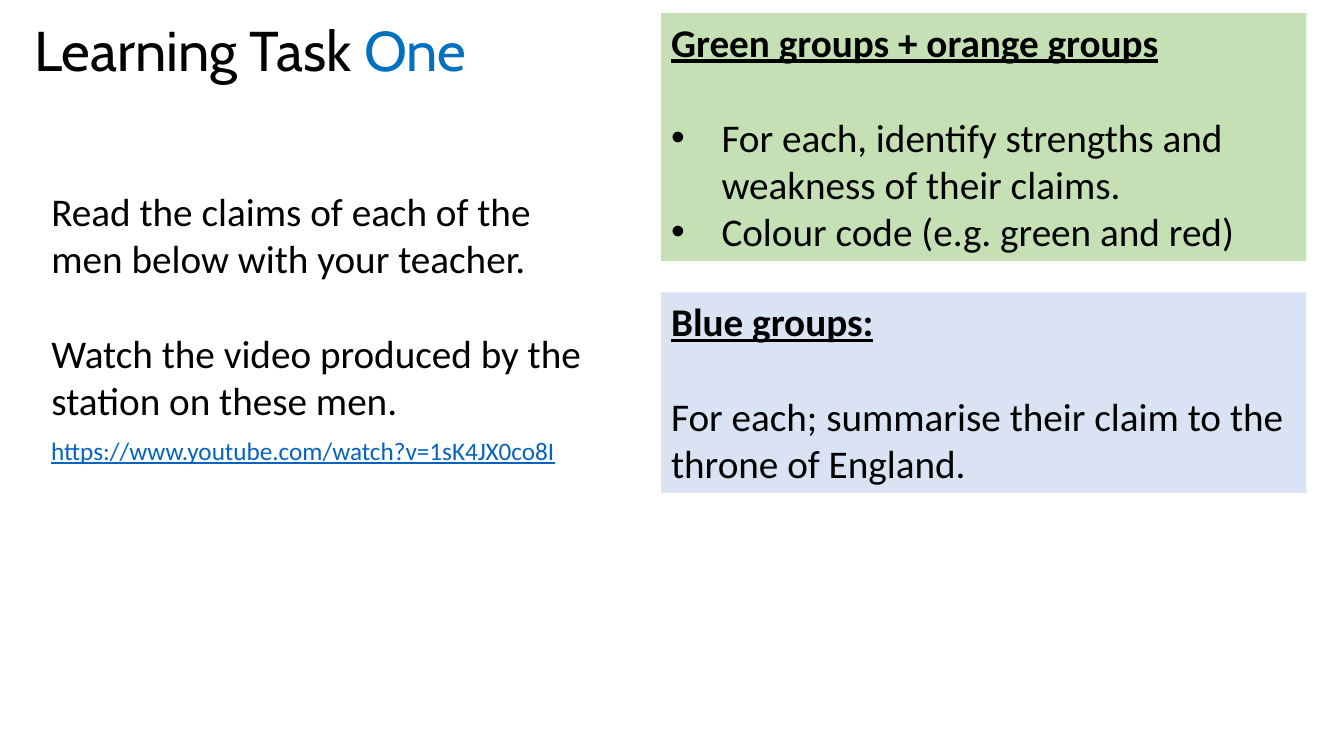
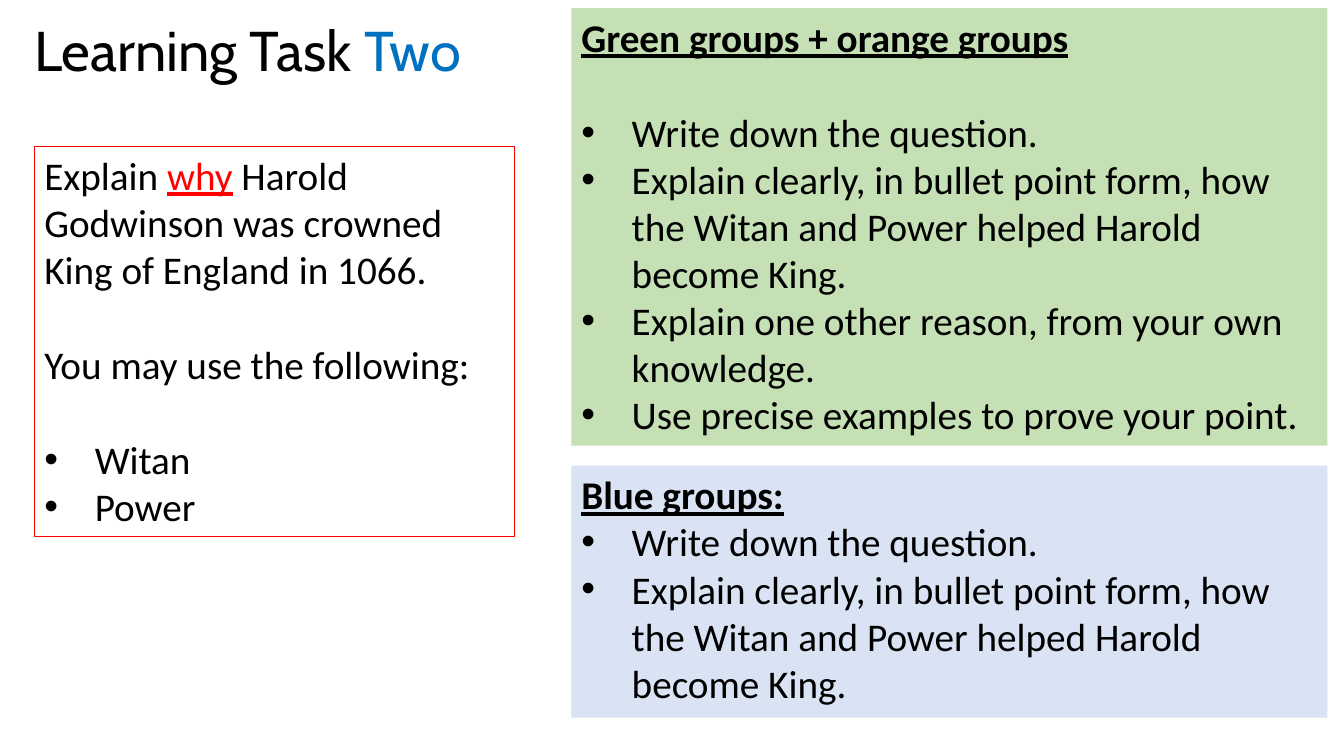
from dataclasses import dataclass

from lxml import etree
from pptx import Presentation
from pptx.dml.color import RGBColor
from pptx.enum.shapes import MSO_SHAPE
from pptx.enum.text import MSO_ANCHOR, MSO_AUTO_SIZE, PP_ALIGN
from pptx.oxml.ns import qn
from pptx.util import Pt

RECTANGLE = MSO_SHAPE.RECTANGLE
TOP = MSO_ANCHOR.TOP
NO_FIT = MSO_AUTO_SIZE.NONE
LEFT = PP_ALIGN.LEFT

# Shared style
BLACK, ACCENT, RED, LINK = "000000", "0070C0", "FF0000", "0563C1"
GREEN_FILL, BLUE_FILL = "C5E0B4", "DAE3F3"
TITLE_FONT, BODY_FONT = "Cabin", "Calibri"
TITLE_SIZE, BODY_SIZE, LINK_SIZE = 40, 28, 18
BODY_LINE = 34.2  # height of one line of body text
BULLET_INDENT = 36
TITLE_AND_CONTENT = 1


@dataclass
class Line:
    text: str
    bullet: bool = False
    gap: bool = False  # leave one line free above
    keyword: str = ""  # word shown in red and underlined


def color(hex_string):
    return RGBColor.from_string(hex_string)


def style_run(run, size=BODY_SIZE, font=BODY_FONT, ink=BLACK, bold=False, underline=False):
    run.font.size = Pt(size)
    run.font.name = font
    run.font.color.rgb = color(ink)
    run.font.bold = bold
    run.font.underline = underline


def place(shape, left, top, width, height):
    shape.left, shape.top = Pt(left), Pt(top)
    shape.width, shape.height = Pt(width), Pt(height)


def prepare_frame(shape, wrap=True):
    frame = shape.text_frame
    frame.word_wrap = wrap
    frame.auto_size = NO_FIT
    frame.vertical_anchor = TOP
    return frame


def set_bullet(paragraph, bullet):
    properties = paragraph._p.get_or_add_pPr()
    indent = Pt(BULLET_INDENT) if bullet else 0
    properties.set("marL", str(indent))
    properties.set("indent", str(-indent))
    if bullet:
        etree.SubElement(properties, qn("a:buFont")).set("typeface", "Arial")
        etree.SubElement(properties, qn("a:buChar")).set("char", "•")
    else:
        etree.SubElement(properties, qn("a:buNone"))


def write_lines(frame, lines):
    for index, line in enumerate(lines):
        paragraph = frame.add_paragraph() if index else frame.paragraphs[0]
        set_bullet(paragraph, line.bullet)
        paragraph.alignment = LEFT
        paragraph.space_before = Pt(BODY_LINE if line.gap else 0)
        before, keyword, after = line.text.partition(line.keyword) if line.keyword else (line.text, "", "")
        for piece in filter(None, (before, keyword, after)):
            run = paragraph.add_run()
            run.text = piece
            if piece == keyword:
                style_run(run, ink=RED, underline=True)
            else:
                style_run(run)


def add_title(slide, number):
    title = slide.shapes.title
    place(title, 17.3, 7.2, 528, 55.4)
    paragraph = prepare_frame(title).paragraphs[0]
    paragraph.alignment = LEFT
    for text, ink in (("Learning Task ", BLACK), (number, ACCENT)):
        run = paragraph.add_run()
        run.text = text
        style_run(run, TITLE_SIZE, TITLE_FONT, ink)


def add_task(slide, box, lines, outline=None):
    body = slide.placeholders[1]
    place(body, *box)
    if outline:
        body.line.color.rgb = color(outline)
        body.line.width = Pt(0.75)
    write_lines(prepare_frame(body), lines)


def add_card(slide, box, fill, heading, lines):
    card = slide.shapes.add_shape(RECTANGLE, *map(Pt, box))
    card.shadow.inherit = False
    card.fill.solid()
    card.fill.fore_color.rgb = color(fill)
    card.line.fill.background()
    frame = prepare_frame(card)
    write_lines(frame, [Line(heading), *lines])
    style_run(frame.paragraphs[0].runs[0], bold=True, underline=True)


def add_group_cards(slide, box, green_height, gap, green_lines, blue_lines):
    """Stack the green and the blue card in the box."""
    left, top, width, height = box
    used = green_height + gap
    add_card(slide, (left, top, width, green_height), GREEN_FILL,
             "Green groups + orange groups", green_lines)
    add_card(slide, (left, top + used, width, height - used), BLUE_FILL,
             "Blue groups:", blue_lines)


def add_address(slide, box, address):
    text_box = slide.shapes.add_textbox(*map(Pt, box))
    frame = prepare_frame(text_box, wrap=False)
    frame.text = address
    style_run(frame.paragraphs[0].runs[0], LINK_SIZE, ink=LINK, underline=True)


def new_slide(presentation, number):
    slide = presentation.slides.add_slide(presentation.slide_layouts[TITLE_AND_CONTENT])
    add_title(slide, number)
    return slide


def build_task_one(presentation):
    slide = new_slide(presentation, "One")
    left, top, height = 29.5, 130.3, 177.1
    add_task(slide, (left, top, 401, height), [
        Line("Read the claims of each of the men below with your teacher."),
        Line("Watch the video produced by the station on these men.", gap=True),
    ])
    add_group_cards(
        slide, (472.3, 9.4, 460.8, 342.7), 177.1, 22.3,
        [Line("For each, identify strengths and weakness of their claims.", bullet=True, gap=True),
         Line("Colour code (e.g. green and red)", bullet=True)],
        [Line("For each; summarise their claim to the throne of England.", gap=True)])
    add_address(slide, (left, top + height, 382.3, 28.8),
                "https://www.youtube.com/watch?v=1sK4JX0co8I")


def build_task_two(presentation):
    slide = new_slide(presentation, "Two")
    question = "Write down the question."
    explanation = ("Explain clearly, in bullet point form, how the Witan and Power "
                   "helped Harold become King.")
    add_task(slide, (24.5, 104.4, 342.7, 278.6), [
        Line("Explain why Harold Godwinson was crowned King of England in 1066.", keyword="why"),
        Line("You may use the following:", gap=True),
        Line("Witan", bullet=True, gap=True),
        Line("Power", bullet=True),
    ], outline=RED)
    add_group_cards(
        slide, (408.2, 5.8, 540, 506.9), 312.5, 14.4,
        [Line(question, bullet=True, gap=True),
         Line(explanation, bullet=True),
         Line("Explain one other reason, from your own knowledge.", bullet=True),
         Line("Use precise examples to prove your point.", bullet=True)],
        [Line(question, bullet=True), Line(explanation, bullet=True)])


def main():
    presentation = Presentation()
    presentation.slide_width, presentation.slide_height = Pt(960), Pt(540)
    build_task_one(presentation)
    build_task_two(presentation)
    presentation.save("out.pptx")


if __name__ == "__main__":
    main()
